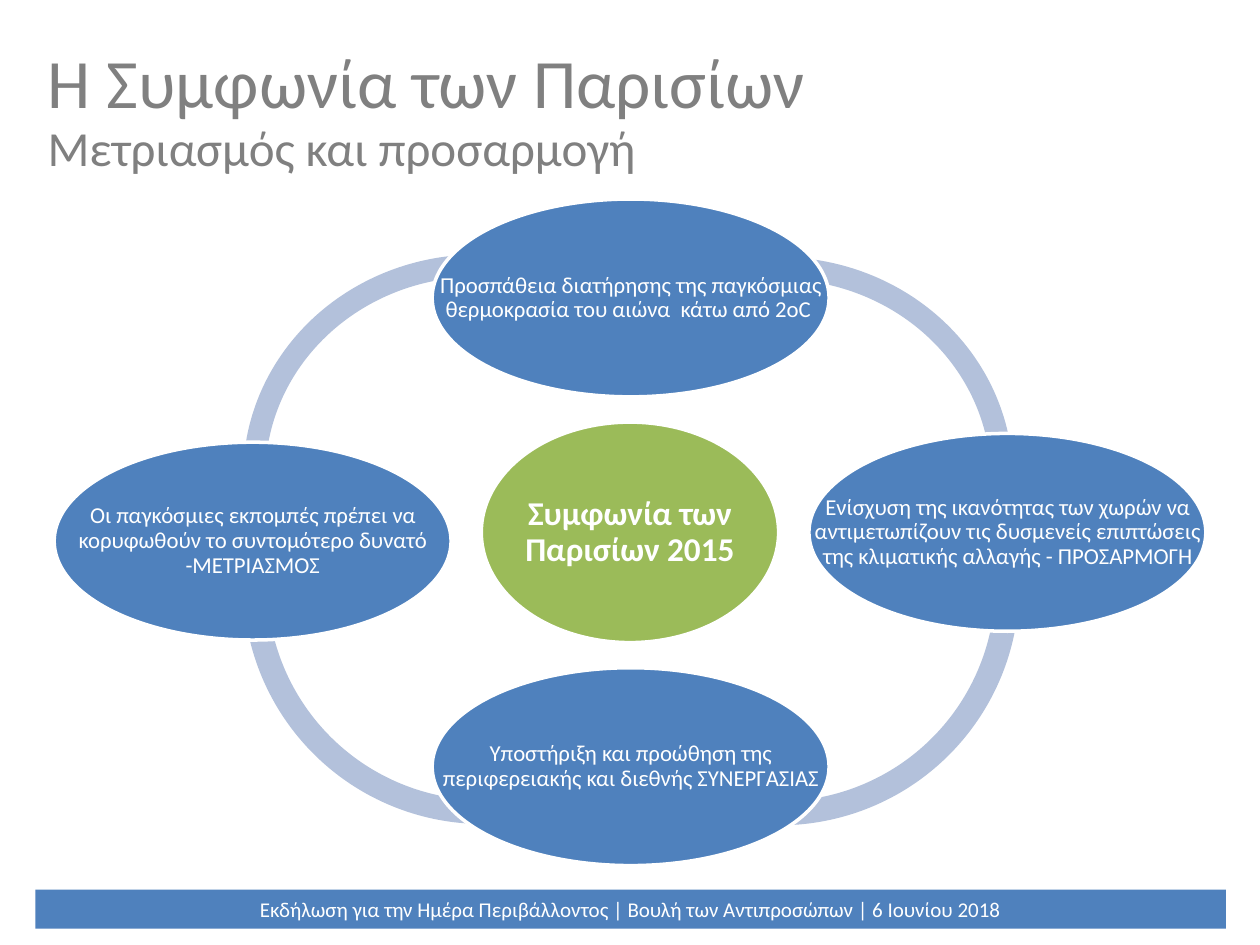
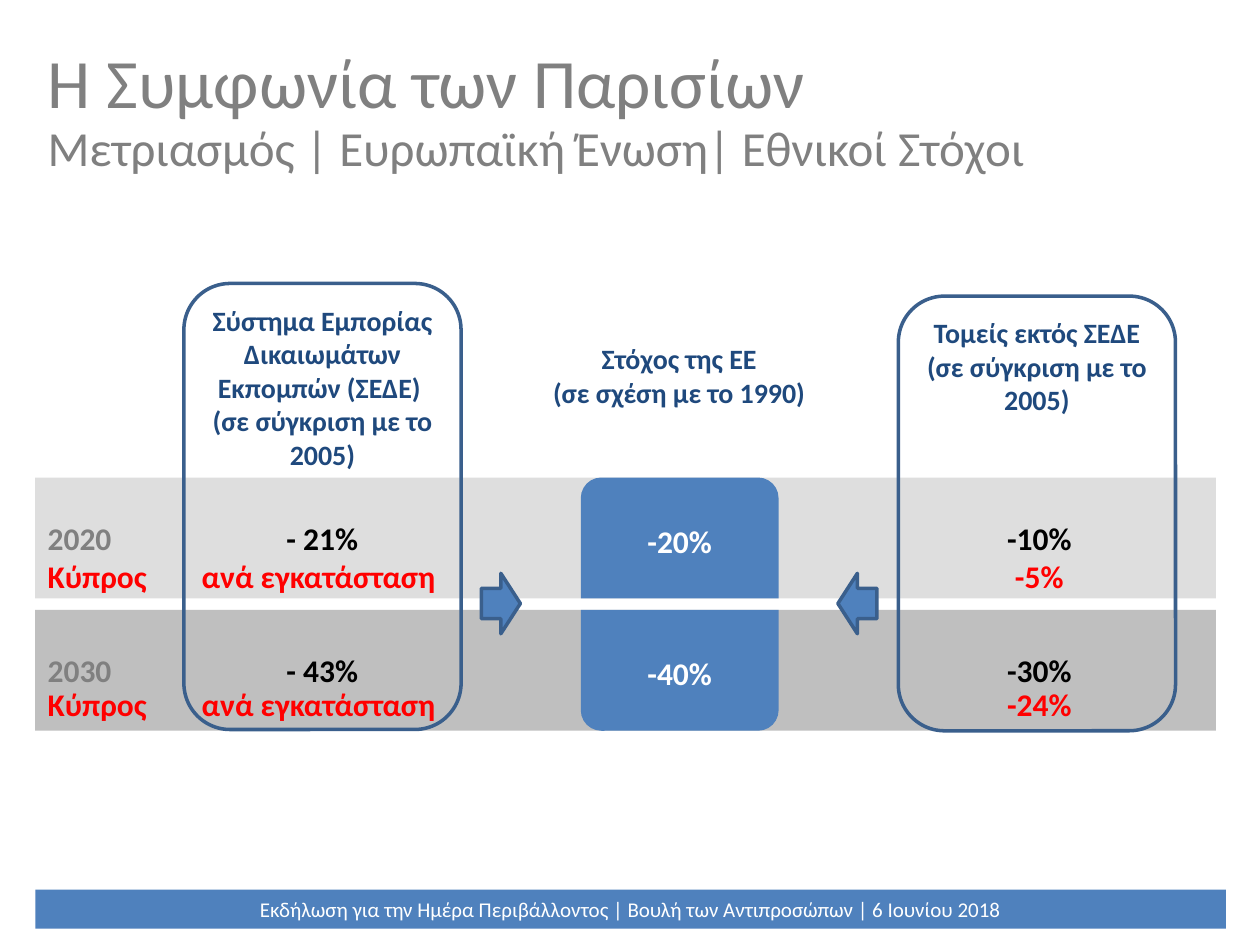
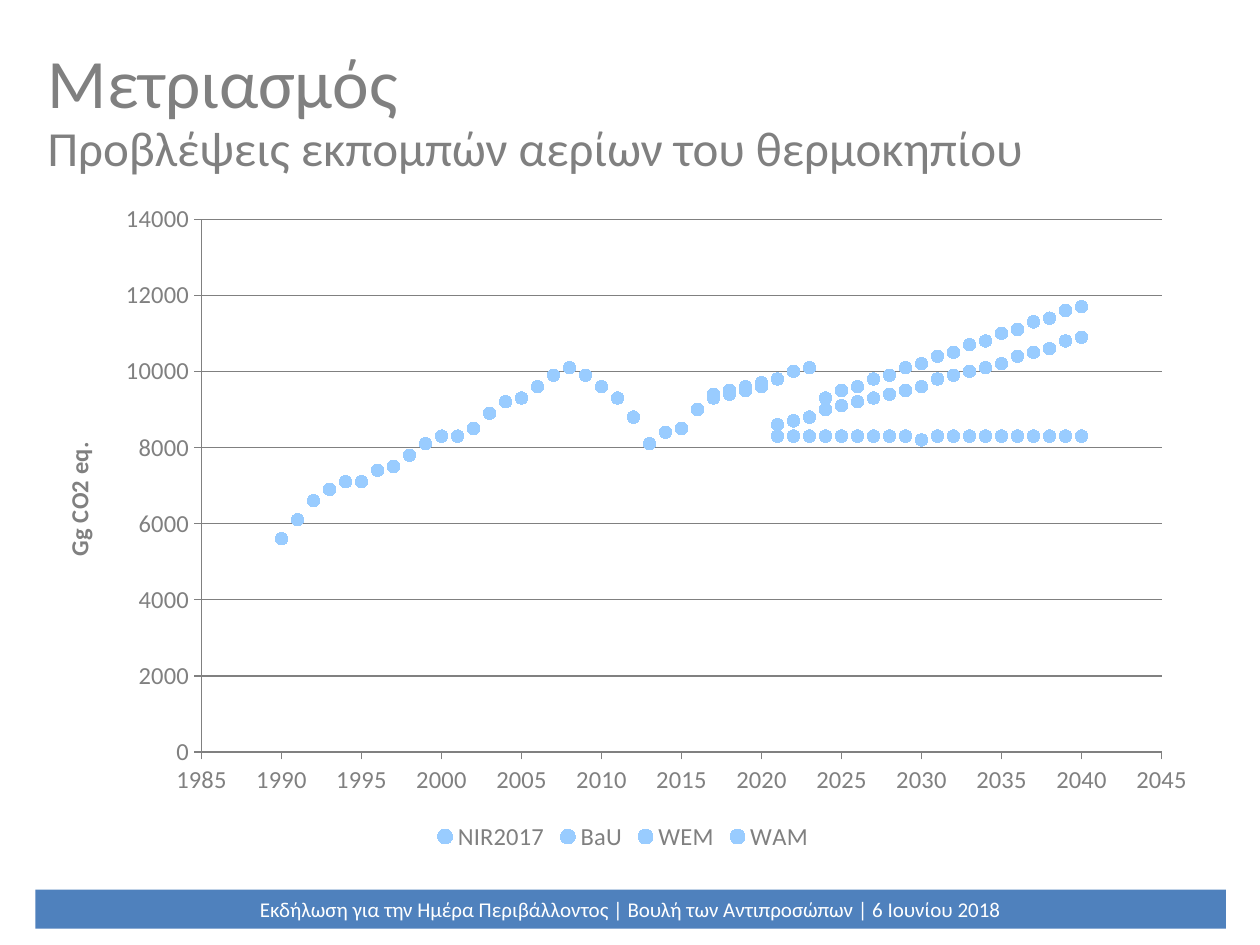
"""Build three slides on the Paris Agreement and emission projections."""
from lxml import etree
from pptx import Presentation
from pptx.chart.data import XyChartData
from pptx.dml.color import RGBColor
from pptx.enum import chart as ch, shapes, text
from pptx.oxml import parse_xml
from pptx.oxml.ns import nsdecls, qn
from pptx.util import Inches, Pt

FONT = "Calibri"
GRAY = RGBColor(0x80, 0x80, 0x80)
BLUE = RGBColor(0x4F, 0x81, 0xBD)
EDGE = RGBColor(0x3A, 0x5F, 0x8C)
NAVY = RGBColor(0x1F, 0x49, 0x7D)
GREEN = RGBColor(0x9B, 0xBB, 0x59)
ARC = RGBColor(0xB3, 0xC1, 0xDB)
LIGHT = RGBColor(0xDE, 0xDE, 0xDE)
SILVER = RGBColor(0xBF, 0xBF, 0xBF)
MARKER = RGBColor(0x99, 0xCC, 0xFF)
WHITE = RGBColor(0xFF, 0xFF, 0xFF)
BLACK = RGBColor(0, 0, 0)
RED = RGBColor(0xFF, 0, 0)

KIND = shapes.MSO_SHAPE
LEFT, CENTER = text.PP_ALIGN.LEFT, text.PP_ALIGN.CENTER
TOP, MIDDLE = text.MSO_ANCHOR.TOP, text.MSO_ANCHOR.MIDDLE

MARGIN, WIDTH = 0.28, 9.45
FOOTER = "Εκδήλωση για την Ημέρα Περιβάλλοντος | Βουλή των Αντιπροσώπων | 6 Ιουνίου 2018"

AGREEMENT = ("Η Συμφωνία των Παρισίων", "Μετριασμός και προσαρμογή")
HUB = "Συμφωνία των Παρισίων 2015"
GOAL_SIZE = (3.15, 1.57)
GOALS = [
    (3.43, 1.58, "Προσπάθεια διατήρησης της παγκόσμιας θερμοκρασία του αιώνα  κάτω από 2οC "),
    (6.42, 3.44, "Ενίσχυση της ικανότητας των χωρών να αντιμετωπίζουν τις δυσμενείς "
                 "επιπτώσεις της κλιματικής αλλαγής - ΠΡΟΣΑΡΜΟΓΗ"),
    (3.43, 5.3, "Υποστήριξη και προώθηση της περιφερειακής και διεθνής ΣΥΝΕΡΓΑΣΙΑΣ"),
    (0.43, 3.51, "Οι παγκόσμιες εκπομπές πρέπει να κορυφωθούν το συντομότερο δυνατό -ΜΕΤΡΙΑΣΜΟΣ"),
]
ARCS = [
    ((1.93, 2.02, 3.72, 3.52), (98.26, 186.25, 0.05)),
    ((1.93, 2.73, 3.81, 3.81), (30.82, 114.15, 0.05)),
    ((4.28, 2.74, 3.81, 3.81), (208.07, 77.64, 0.05)),
    ((4.32, 2.04, 3.72, 3.52), (138.4, 7.81, 0.05)),
]

TARGETS = ("Η Συμφωνία των Παρισίων", "Μετριασμός | Ευρωπαϊκή Ένωση| Εθνικοί Στόχοι")
ROW_W, ROW_H = 9.37, 0.96
ROWS = [
    {"y": 3.79, "fill": LIGHT, "year": "2020", "eu": "-20%", "values": "\t- 21%\t-10%",
     "cyprus": "Κύπρος\tανά εγκατάσταση\t-5%", "cyprus_y": 4.37, "corners": (0.17, 0)},
    {"y": 4.84, "fill": SILVER, "year": "2030", "eu": "-40%", "values": "\t- 43%\t-30%",
     "cyprus": "Κύπρος\tανά εγκατάσταση\t-24%", "cyprus_y": 5.39, "corners": (0, 0.17)},
]
VALUE_TABS = (2.18, 7.87)
CYPRUS_TABS = (2.15, 7.87)
FRAMES = [
    ((4.13, 2.54, 2.52, 3.21), None, ["Στόχος της ΕΕ", "(σε σχέση με το 1990)"]),
    ((7.13, 2.35, 2.2, 3.45), EDGE, ["Τομείς εκτός ΣΕΔΕ", "(σε σύγκριση με το 2005)"]),
    ((1.46, 2.25, 2.2, 3.54), EDGE,
     ["Σύστημα Εμπορίας Δικαιωμάτων Εκπομπών (ΣΕΔΕ) ", "(σε σύγκριση με το 2005)"]),
]
ARROWS = [(KIND.RIGHT_ARROW, 3.82), (KIND.LEFT_ARROW, 6.65)]

PROJECTIONS = ("Μετριασμός", "Προβλέψεις εκπομπών αερίων του θερμοκηπίου")
YEARS = range(1990, 2041)
SERIES = [
    ("NIR2017", 1990, [5600, 6100, 6600, 6900, 7100, 7100, 7400, 7500, 7800, 8100, 8300, 8300, 8500,
                       8900, 9200, 9300, 9600, 9900, 10100, 9900, 9600, 9300, 8800, 8100, 8400, 8500]),
    ("BaU", 2016, [9000, 9400, 9500, 9600, 9700, 9800, 10000, 10100, 9300, 9500, 9600, 9800, 9900,
                   10100, 10200, 10400, 10500, 10700, 10800, 11000, 11100, 11300, 11400, 11600, 11700]),
    ("WEM", 2016, [9000, 9300, 9400, 9500, 9700, 8600, 8700, 8800, 9000, 9100, 9200, 9300, 9400,
                   9500, 9600, 9800, 9900, 10000, 10100, 10200, 10400, 10500, 10600, 10800, 10900]),
    ("WAM", 2016, [9000, 9300, 9400, 9600, 9600, 8300, 8300, 8300, 8300, 8300, 8300, 8300, 8300,
                   8300, 8200, 8300, 8300, 8300, 8300, 8300, 8300, 8300, 8300, 8300, 8300]),
]
CHART_AT = (MARGIN, 1.51, 9.33, 5.29)
PLOT_AT = (1.6, 1.74, 7.62, 4.23)


def write(sp, paragraphs, size=18, color=WHITE, bold=False, align=CENTER, anchor=MIDDLE,
          inset=None, spacing=None, tabs=()):
    """Fill a shape with paragraphs, each a string or a list of (text, colour) runs."""
    tf = sp.text_frame
    tf.word_wrap, tf.auto_size, tf.vertical_anchor = True, text.MSO_AUTO_SIZE.NONE, anchor
    if inset is not None:
        tf.margin_left = tf.margin_right = tf.margin_top = tf.margin_bottom = Inches(inset)
    for i, runs in enumerate(paragraphs):
        p = tf.add_paragraph() if i else tf.paragraphs[0]
        p.alignment = align
        if spacing:
            p.line_spacing = spacing
        if tabs:
            stops = etree.SubElement(p._p.get_or_add_pPr(), qn("a:tabLst"))
            for x in tabs:
                etree.SubElement(stops, qn("a:tab"), pos=str(Inches(x)), algn="ctr")
        for words, tint in [(runs, color)] if isinstance(runs, str) else runs:
            r = p.add_run()
            r.text = words
            r.font.name, r.font.size, r.font.bold = FONT, Pt(size), bold
            r.font.color.rgb = tint


def box(s, kind, at, fill=None, line=None, adjust=()):
    """Add a preset shape with an optional fill and outline."""
    sp = s.shapes.add_shape(kind, *map(Inches, at))
    sp.shadow.inherit = False
    if fill is None:
        sp.fill.background()
    else:
        sp.fill.solid()
        sp.fill.fore_color.rgb = fill
    if line is None:
        sp.line.fill.background()
    else:
        sp.line.color.rgb, sp.line.width = line, Pt(2)
    for i, value in enumerate(adjust):
        sp.adjustments[i] = value
    return sp


def label(s, at, paragraphs, **style):
    """Add a text box."""
    write(s.shapes.add_textbox(*map(Inches, at)), paragraphs, **style)


def new_slide(prs, heading):
    """Add a slide with title, subtitle and footer band."""
    s = prs.slides.add_slide(prs.slide_layouts[5])
    title, subtitle = heading
    sp = s.shapes.title
    sp.left, sp.top, sp.width, sp.height = map(Inches, (MARGIN, 0.3, WIDTH, 0.69))
    write(sp, [title], size=39.6, color=GRAY, align=LEFT)
    label(s, (MARGIN, 0.82, WIDTH, 0.69), [subtitle], size=28, color=GRAY, align=LEFT)
    write(box(s, KIND.RECTANGLE, (MARGIN, 7.06, WIDTH, 0.31), BLUE), [FOOTER], size=12)
    return s


def agreement_slide(prs):
    """Draw the ring of goals around the agreement."""
    s = new_slide(prs, AGREEMENT)
    for at, angles in ARCS:
        box(s, KIND.BLOCK_ARC, at, ARC, adjust=angles)
    hub = (3.82, 3.35, 2.36, 1.75)
    box(s, KIND.OVAL, hub, GREEN, WHITE)
    label(s, hub, [HUB], size=19, bold=True, inset=0.03, spacing=0.9)
    for x, y, words in GOALS:
        at = (x, y, *GOAL_SIZE)
        box(s, KIND.OVAL, at, BLUE, WHITE)
        label(s, at, [words], size=13, inset=0.02, spacing=0.9)


def targets_slide(prs):
    """Draw the target rows with the column frames over them."""
    s = new_slide(prs, TARGETS)
    for row in ROWS:
        sp = box(s, KIND.RECTANGLE, (MARGIN, row["y"], ROW_W, ROW_H), row["fill"])
        write(sp, [[(row["year"], GRAY), (row["values"], BLACK)]], bold=True, align=LEFT,
              tabs=VALUE_TABS)
    for at, line, words in FRAMES:
        write(box(s, KIND.ROUNDED_RECTANGLE, at, line=line), words, size=16, color=NAVY,
              bold=True, anchor=TOP)
    for kind, x in ARROWS:
        box(s, kind, (x, 4.55, 0.31, 0.48), BLUE, EDGE)
    for row in ROWS:
        at = (4.61, row["y"], 1.57, ROW_H)
        sp = box(s, KIND.ROUND_2_SAME_RECTANGLE, at, BLUE, adjust=row["corners"])
        if row["corners"][1]:
            sp = box(s, KIND.ROUND_2_SAME_RECTANGLE, at)
        write(sp, [row["eu"]], bold=True)
        label(s, (MARGIN, row["cyprus_y"], ROW_W, 0.4), [row["cyprus"]], color=RED, bold=True,
              align=LEFT, anchor=TOP, tabs=CYPRUS_TABS)


def place_plot(chart):
    """Fix the inner plot area as fractions of the chart."""
    area = chart._chartSpace.chart.plotArea
    for old in area.findall(qn("c:layout")):
        area.remove(old)
    left, top, width, height = CHART_AT
    x, y, w, h = PLOT_AT
    parts = {"x": (x - left) / width, "y": (y - top) / height, "w": w / width, "h": h / height}
    sizes = "".join(f'<c:{k} val="{v:.4f}"/>' for k, v in parts.items())
    area.insert(0, parse_xml(
        f'<c:layout {nsdecls("c")}><c:manualLayout><c:layoutTarget val="inner"/>'
        f'<c:xMode val="edge"/><c:yMode val="edge"/>{sizes}</c:manualLayout></c:layout>'))


def drop_empty_points(chart):
    """Leave a gap in each series for the years without a value."""
    for pt in list(chart._chartSpace.iter(qn("c:pt"))):
        if pt.findtext(qn("c:v")) == "None":
            pt.getparent().remove(pt)


def projections_slide(prs):
    """Draw the scatter chart of emissions by year."""
    s = new_slide(prs, PROJECTIONS)
    data = XyChartData()
    for name, start, values in SERIES:
        series = data.add_series(name)
        known = dict(enumerate(values, start))
        for year in YEARS:
            series.add_data_point(year, known.get(year))
    chart = s.shapes.add_chart(ch.XL_CHART_TYPE.XY_SCATTER, *map(Inches, CHART_AT), data).chart
    drop_empty_points(chart)
    chart.has_title = False
    chart.font.name, chart.font.size, chart.font.color.rgb = FONT, Pt(14), GRAY
    chart.has_legend = True
    chart.legend.position = ch.XL_LEGEND_POSITION.BOTTOM
    chart.legend.include_in_layout = False
    chart.plots[0].vary_by_categories = False
    for series in chart.plots[0].series:
        series.format.line.fill.background()
        series.marker.style, series.marker.size = ch.XL_MARKER_STYLE.CIRCLE, 7
        series.marker.format.fill.solid()
        series.marker.format.fill.fore_color.rgb = MARKER
        series.marker.format.line.fill.background()
    scales = [(chart.category_axis, 1985, 2045, 5), (chart.value_axis, 0, 14000, 2000)]
    for axis, low, high, step in scales:
        axis.minimum_scale, axis.maximum_scale, axis.major_unit = low, high, step
        axis.major_tick_mark = ch.XL_TICK_MARK.OUTSIDE
        axis.format.line.color.rgb = GRAY
        axis.tick_labels.number_format = "General"
        axis.tick_labels.number_format_is_linked = False
    chart.category_axis.has_major_gridlines = False
    chart.value_axis.major_gridlines.format.line.color.rgb = GRAY
    tf = chart.value_axis.axis_title.text_frame
    tf.text = "Gg CO2 eq."
    font = tf.paragraphs[0].runs[0].font
    font.name, font.size, font.bold, font.color.rgb = FONT, Pt(14), True, GRAY
    place_plot(chart)


def main():
    """Build and save the slides."""
    prs = Presentation()
    prs.slide_width, prs.slide_height = Inches(10), Inches(7.5)
    agreement_slide(prs)
    targets_slide(prs)
    projections_slide(prs)
    prs.save("out.pptx")


if __name__ == "__main__":
    main()
